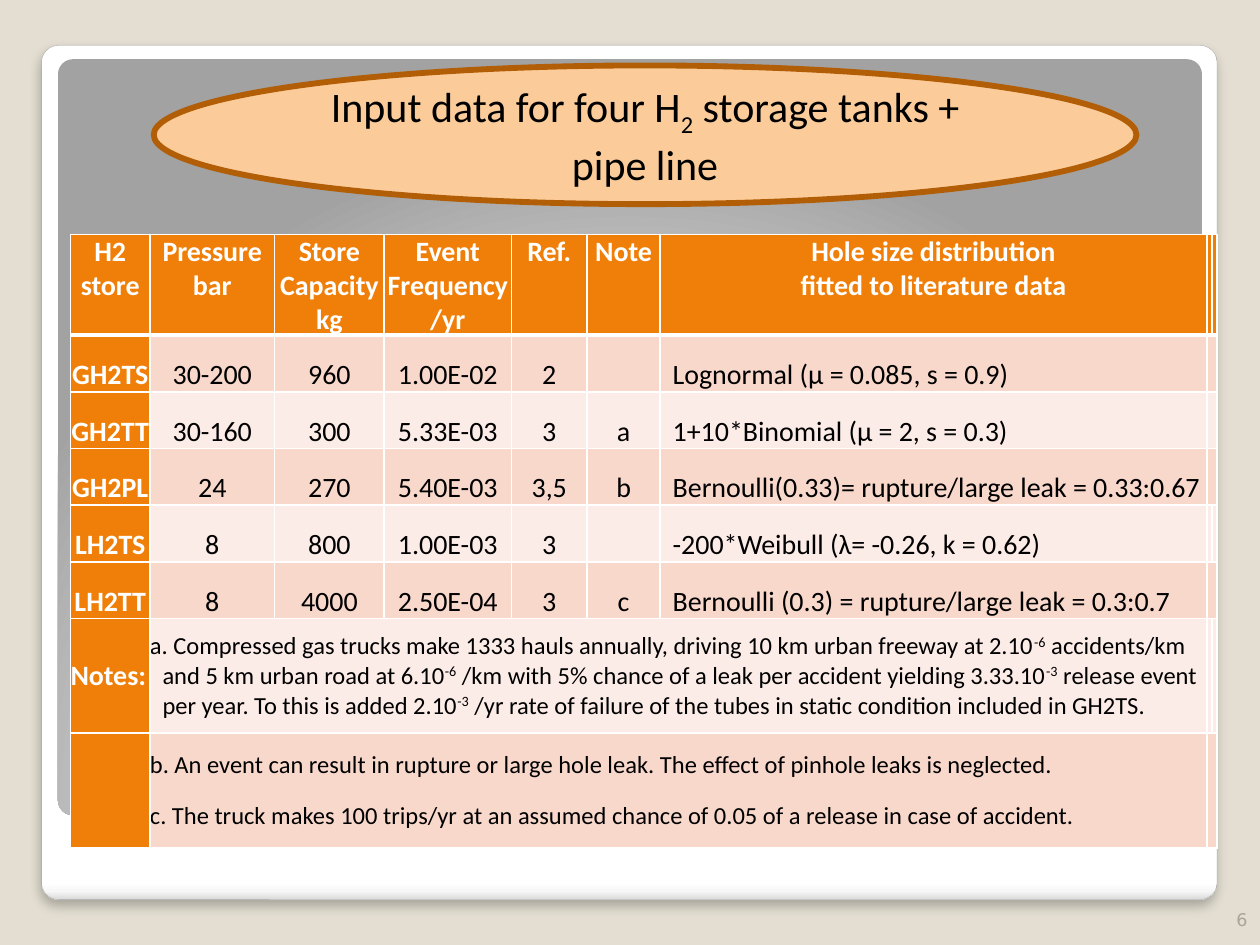
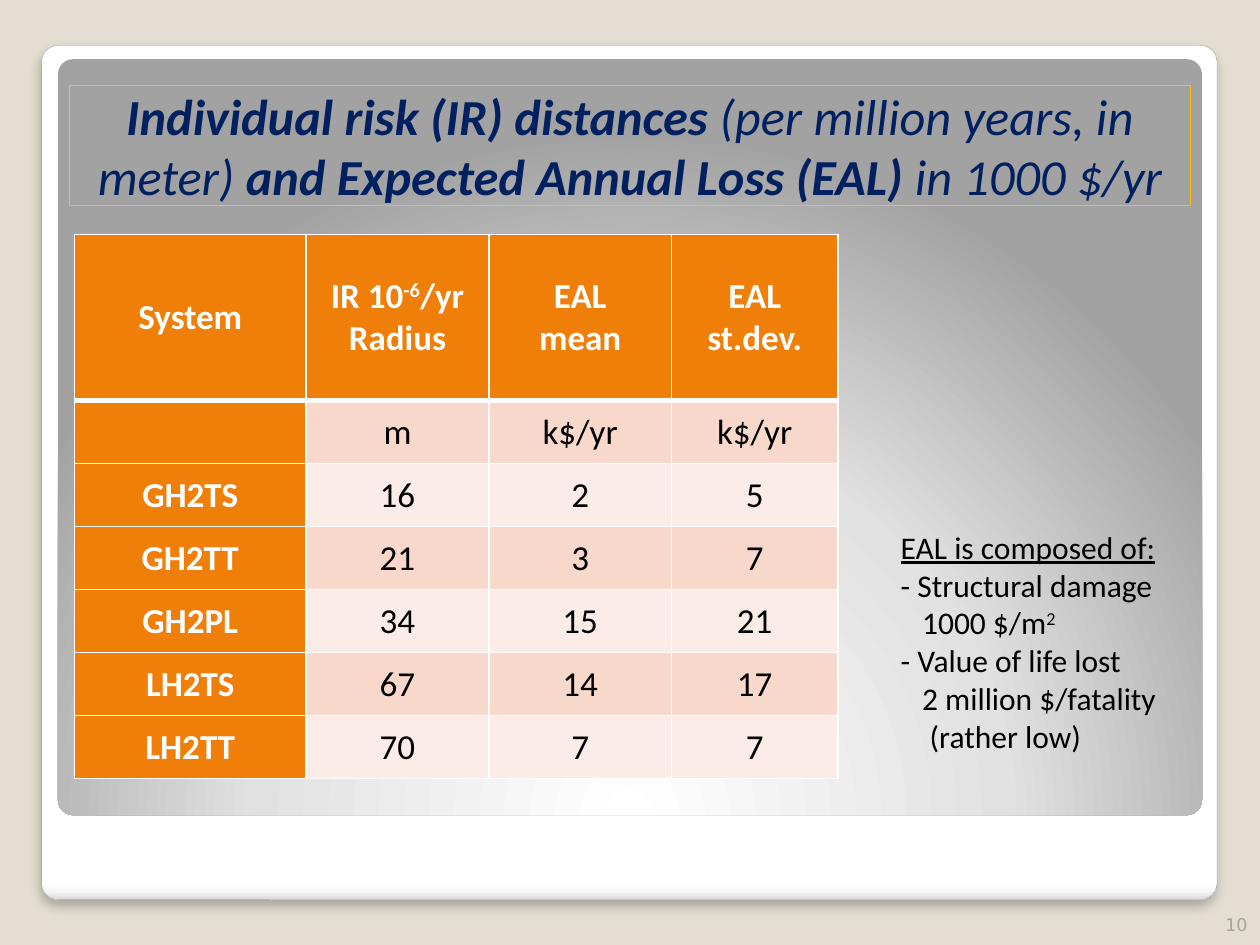
from lxml import etree
from pptx import Presentation
from pptx.dml.color import RGBColor
from pptx.enum.shapes import MSO_SHAPE
from pptx.enum.text import MSO_ANCHOR, MSO_AUTO_SIZE, PP_ALIGN
from pptx.oxml import parse_xml
from pptx.oxml.ns import nsdecls, qn
from pptx.util import Inches, Pt

ROUNDED, OVAL = MSO_SHAPE.ROUNDED_RECTANGLE, MSO_SHAPE.OVAL
TOP, MIDDLE, BOTTOM = MSO_ANCHOR.TOP, MSO_ANCHOR.MIDDLE, MSO_ANCHOR.BOTTOM
LEFT, CENTER, RIGHT = PP_ALIGN.LEFT, PP_ALIGN.CENTER, PP_ALIGN.RIGHT

BEIGE = RGBColor(0xE3, 0xDE, 0xD1)
FRAME_GRAY = RGBColor(0xA4, 0xA4, 0xA4)
NUMBER_GRAY = RGBColor(0xA8, 0xA4, 0x9B)
BLACK = RGBColor(0, 0, 0)
WHITE = RGBColor(0xFF, 0xFF, 0xFF)
ORANGE = RGBColor(0xF0, 0x7F, 0x09)
DARK_ORANGE = RGBColor(0xB2, 0x5E, 0x07)
PEACH = RGBColor(0xFB, 0xCC, 0x9A)
BAND_DARK = RGBColor(0xF9, 0xD8, 0xCC)
BAND_LIGHT = RGBColor(0xFC, 0xEC, 0xE7)
NAVY = RGBColor(0x00, 0x20, 0x60)
GOLD = RGBColor(0xFF, 0xC0, 0x00)

WIDTH, HEIGHT = Inches(10), Inches(7.5)
BASELINES = {"^": "30000", "_": "-25000"}


def place(left, top, width, height):
    """Turn percentages of the slide into lengths."""
    return (int(WIDTH * left / 100), int(HEIGHT * top / 100),
            int(WIDTH * width / 100), int(HEIGHT * height / 100))


def write(frame, paragraphs, size, color, align=LEFT, flags="", font="Calibri"):
    """Fill a frame; a run is (text, flags): b, i, u, ^ superscript, _ subscript."""
    for index, runs in enumerate(paragraphs):
        paragraph = frame.add_paragraph() if index else frame.paragraphs[0]
        paragraph.alignment = align
        for text, own_flags in [(runs, "")] if isinstance(runs, str) else runs:
            run = paragraph.add_run()
            run.text = text
            style = flags + own_flags
            run.font.name, run.font.size = font, Pt(size)
            run.font.color.rgb = color
            run.font.bold, run.font.italic = "b" in style, "i" in style
            run.font.underline = "u" in style
            for mark, baseline in BASELINES.items():
                if mark in style:
                    run._r.get_or_add_rPr().set("baseline", baseline)


prs = Presentation()
prs.slide_width, prs.slide_height = WIDTH, HEIGHT
background = prs.slide_master.background.fill
background.solid()
background.fore_color.rgb = BEIGE

# Shared frames, title and page number
FRAMES = [
    (place(3.3, 4.8, 93.3, 90.4),
     [(0, "FFFFFF"), (98, "FFFFFF"), (99, "F7F7F7"), (100, "DADADA")],
     '<a:lin ang="5400000" scaled="0"/>'),
    (place(4.6, 6.27, 90.8, 80),
     [(0, "FFFFFF"), (55, "E1E1E1"), (100, "A2A2A2")],
     '<a:path path="circle"><a:fillToRect l="50000" t="175000" r="50000" b="-75000"/></a:path>'),
]
SHADOW = (f'<a:effectLst {nsdecls("a")}><a:outerShdw blurRad="76200" dist="50800" dir="5400000">'
          '<a:srgbClr val="000000"><a:alpha val="25000"/></a:srgbClr></a:outerShdw></a:effectLst>')

slides = []
for page, number_top, number_anchor in (("6", 94.67, MIDDLE), ("10", 94.27, BOTTOM)):
    slide = prs.slides.add_slide(prs.slide_layouts[5])
    slides.append(slide)
    for area, stops, direction in FRAMES:
        panel = slide.shapes.add_shape(ROUNDED, *area)
        panel.adjustments[0] = 0.02
        panel.line.fill.background()
        stop_xml = "".join(f'<a:gs pos="{share * 1000}"><a:srgbClr val="{color}"/></a:gs>'
                           for share, color in stops)
        panel.element.spPr.find(qn("a:prstGeom")).addnext(parse_xml(
            f'<a:gradFill {nsdecls("a")} rotWithShape="1"><a:gsLst>{stop_xml}</a:gsLst>'
            f'{direction}</a:gradFill>'))
        if area == FRAMES[0][0]:
            panel.line.color.rgb, panel.line.width = FRAME_GRAY, Pt(0.16)
            panel.element.spPr.append(parse_xml(SHADOW))
        else:
            panel.shadow.inherit = False

    slide.shapes.element.append(slide.shapes.title.element)
    title_frame = slide.shapes.title.text_frame
    title_frame.vertical_anchor = MIDDLE
    title_frame.auto_size = MSO_AUTO_SIZE.NONE
    page_number = slide.shapes.add_textbox(*place(80, number_top, 20, 5.33)).text_frame
    page_number.word_wrap = True
    page_number.vertical_anchor = number_anchor
    write(page_number, [page], 10, NUMBER_GRAY, RIGHT, font="DejaVu Sans")

input_slide, risk_slide = slides

# Input data: table contents
INPUT_HEADER = [["H2", "store"], ["Pressure", "bar"], ["Store", "Capacity kg"],
                ["Event", "Frequency /yr"], ["Ref."], ["Note"],
                ["Hole size distribution", "fitted to literature data"]]
INPUT_ROWS = [
    ["GH2TS", "30-200", "960", "1.00E-02", "2", "", "Lognormal (μ = 0.085, s = 0.9)"],
    ["GH2TT", "30-160", "300", "5.33E-03", "3", "a", "1+10*Binomial (μ = 2, s = 0.3)"],
    ["GH2PL", "24", "270", "5.40E-03", "3,5", "b",
     "Bernoulli(0.33)= rupture/large leak = 0.33:0.67"],
    ["LH2TS", "8", "800", "1.00E-03", "3", "", "-200*Weibull (λ= -0.26, k = 0.62)"],
    ["LH2TT", "8", "4000", "2.50E-04", "3", "c",
     "Bernoulli (0.3) = rupture/large leak = 0.3:0.7"],
]
NOTE_A = [
    ("a. Compressed gas trucks make 1333 hauls annually, driving 10 km urban freeway at 2.10", ""),
    ("-6", "^"), (" accidents/km and 5 km urban road at 6.10", ""),
    ("-6", "^"), (" /km with 5% chance of a leak per accident yielding 3.33.10", ""),
    ("-3", "^"), (" release event per year. To this is added 2.10", ""),
    ("-3", "^"), (" /yr rate of failure of the tubes in static condition included in GH2TS.", ""),
]
NOTES_B_C = [
    "b. An event can result in rupture or large hole leak. The effect of pinhole leaks is neglected.",
    "c. The truck makes 100 trips/yr at an assumed chance of 0.05 of a release in case of accident.",
]
NOTE_A_ROW, NOTES_B_C_ROW = 6, 7

# Risk: table contents
RISK_HEADER = [["System"], [[("IR 10", ""), ("-6", "^"), ("/yr Radius", "")]],
               ["EAL", "mean"], ["EAL st.dev."]]
RISK_ROWS = [
    ["", "m", "k$/yr", "k$/yr"],
    ["GH2TS", "16", "2", "5"],
    ["GH2TT", "21", "3", "7"],
    ["GH2PL", "34", "15", "21"],
    ["LH2TS", "67", "14", "17"],
    ["LH2TT", "70", "7", "7"],
]

# Both tables: slide, area, column and row shares, contents, size, anchors, side margin
TABLES = [
    (input_slide, place(5.6, 24.8, 91.1, 65.2),
     [6.3, 9.9, 8.7, 10.1, 6, 5.8, 43.4, 0.4, 0.4], [9.07] + [6] * 5 + [12.13] * 2,
     INPUT_HEADER, INPUT_ROWS, 16, TOP, BOTTOM, 0),
    (risk_slide, place(5.9, 24.8, 60.6, 57.73),
     [18.4, 14.5, 14.5, 13.2], [17.6] + [6.67] * 6,
     RISK_HEADER, RISK_ROWS, 20, MIDDLE, MIDDLE, 0.05),
]
tables = []
for (slide, area, columns, heights, header, body, size,
     header_anchor, body_anchor, margin) in TABLES:
    table = slide.shapes.add_table(len(heights), len(columns), *area).table
    tables.append(table)
    for column, share in zip(table.columns, columns):
        column.width = int(WIDTH * share / 100)
    for row, share in zip(table.rows, heights):
        row.height = int(HEIGHT * share / 100)

    for r in range(len(heights)):
        for c in range(len(columns)):
            cell = table.cell(r, c)
            cell.margin_left = cell.margin_right = Inches(margin)
            cell.margin_top = cell.margin_bottom = 0
            cell.vertical_anchor = body_anchor if r else header_anchor
            for side in "LRTB":
                thick = (r, side) in ((0, "B"), (1, "T"))
                border = etree.SubElement(cell._tc.get_or_add_tcPr(), qn(f"a:ln{side}"),
                                          w=str(Pt(3 if thick else 1)))
                fill = etree.SubElement(border, qn("a:solidFill"))
                etree.SubElement(fill, qn("a:srgbClr"), val=str(WHITE))
            heading = r == 0 or c == 0
            cell.fill.solid()
            cell.fill.fore_color.rgb = ORANGE if heading else (BAND_DARK if r % 2 else BAND_LIGHT)

    for c, lines in enumerate(header):
        write(table.cell(0, c).text_frame, lines, size, WHITE, CENTER, "b")
    for r, values in enumerate(body, start=1):
        for c, value in enumerate(values):
            if value:
                write(table.cell(r, c).text_frame, [value], size, BLACK if c else WHITE,
                      LEFT if c == 6 else CENTER, "" if c else "b")

# Input data: merged cells and notes
input_table = tables[0]
for r in range(1, 6):
    input_table.cell(r, 6).margin_left = Inches(0.1)
for r in (1, 2, 3, 5, 7):
    input_table.cell(r, 7).merge(input_table.cell(r, 8))
notes_label = input_table.cell(NOTE_A_ROW, 0)
notes_label.vertical_anchor = MIDDLE
write(notes_label.text_frame, ["Notes:"], 16, WHITE, flags="b")
notes_label.text_frame.paragraphs[0].space_before = Pt(6)
for r, notes, before, after in ((NOTE_A_ROW, [NOTE_A], 6, 0), (NOTES_B_C_ROW, NOTES_B_C, 0, 12)):
    note = input_table.cell(r, 1)
    note.merge(input_table.cell(r, 6))
    note.vertical_anchor = MIDDLE
    write(note.text_frame, notes, 14, BLACK)
    for paragraph in note.text_frame.paragraphs:
        paragraph.space_before, paragraph.space_after = Pt(before), Pt(after)
        hanging = paragraph._p.get_or_add_pPr()
        hanging.set("marL", str(Inches(0.1)))
        hanging.set("indent", str(-Inches(0.1)))

# Input data: title on its ellipse
ellipse = input_slide.shapes.add_shape(OVAL, *place(12.2, 6.93, 78, 14.67))
ellipse.shadow.inherit = False
ellipse.fill.solid()
ellipse.fill.fore_color.rgb = PEACH
ellipse.line.color.rgb, ellipse.line.width = DARK_ORANGE, Pt(3.35)
input_title = input_slide.shapes.title
input_slide.shapes.element.append(input_title.element)
input_title.left, input_title.top, input_title.width, input_title.height = place(
    23.6, 9.07, 55.2, 10.4)
write(input_title.text_frame,
      [[("Input data for four H", ""), ("2", "_"), (" storage tanks + pipe line", "")]],
      24, BLACK, CENTER)

# Risk: title
risk_title = risk_slide.shapes.title
risk_title.left, risk_title.top, risk_title.width, risk_title.height = place(
    5.5, 9.07, 89, 12.67)
risk_title.line.color.rgb, risk_title.line.width = GOLD, Pt(0.75)
write(risk_title.text_frame,
      [[("Individual risk (IR) distances ", "b"), ("(per million years, in meter) ", ""),
        ("and Expected Annual Loss (EAL) ", "b"), ("in 1000 $/yr", "")]],
      28.8, NAVY, CENTER, "i")

# Risk: what the loss is made of
composition = risk_slide.shapes.add_textbox(*place(70.5, 55.2, 22.5, 25.6)).text_frame
composition.word_wrap = False
write(composition,
      [[("EAL is composed of:", "u")], "- Structural damage", [("1000 $/m", ""), ("2", "^")],
       "- Value of life lost", "2 million $/fatality", "(rather low)"], 18, BLACK)
for index, indent in ((2, 0.17), (4, 0.17), (5, 0.23)):
    composition.paragraphs[index]._p.get_or_add_pPr().set("marL", str(Inches(indent)))

prs.save("out.pptx")
